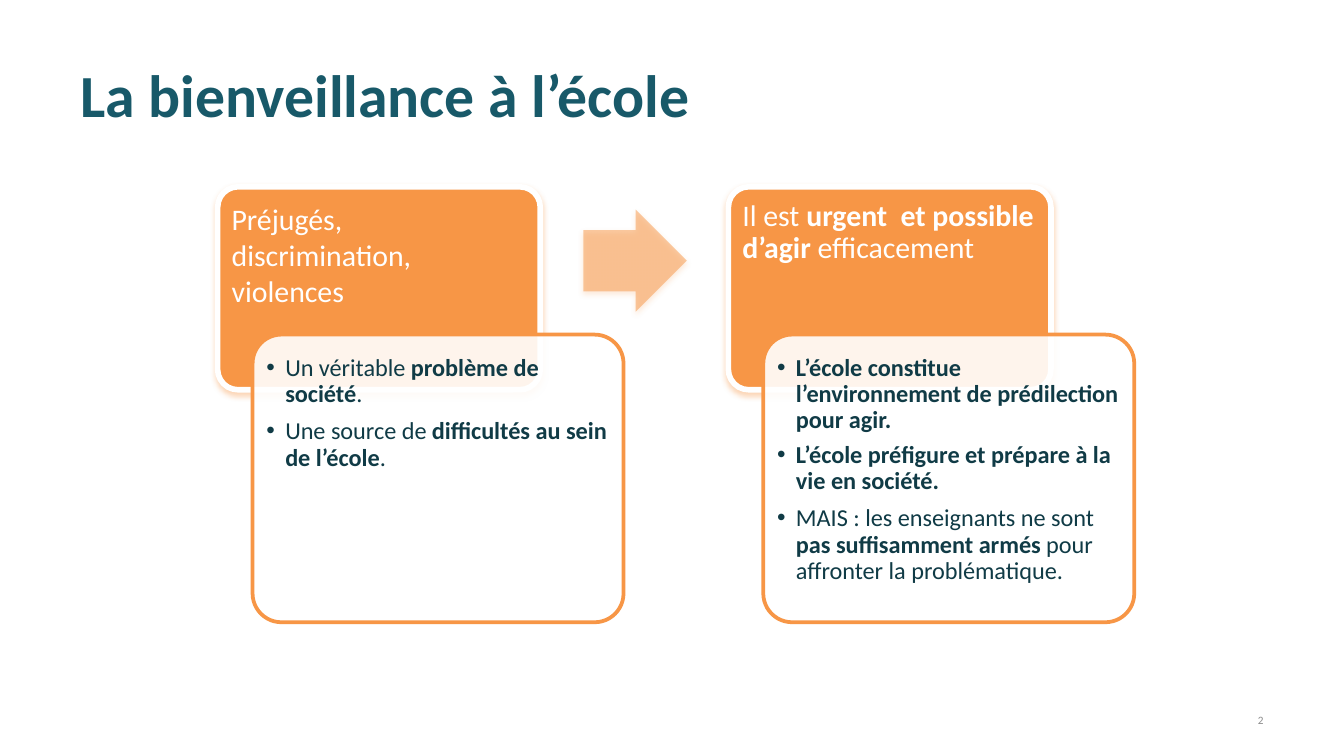
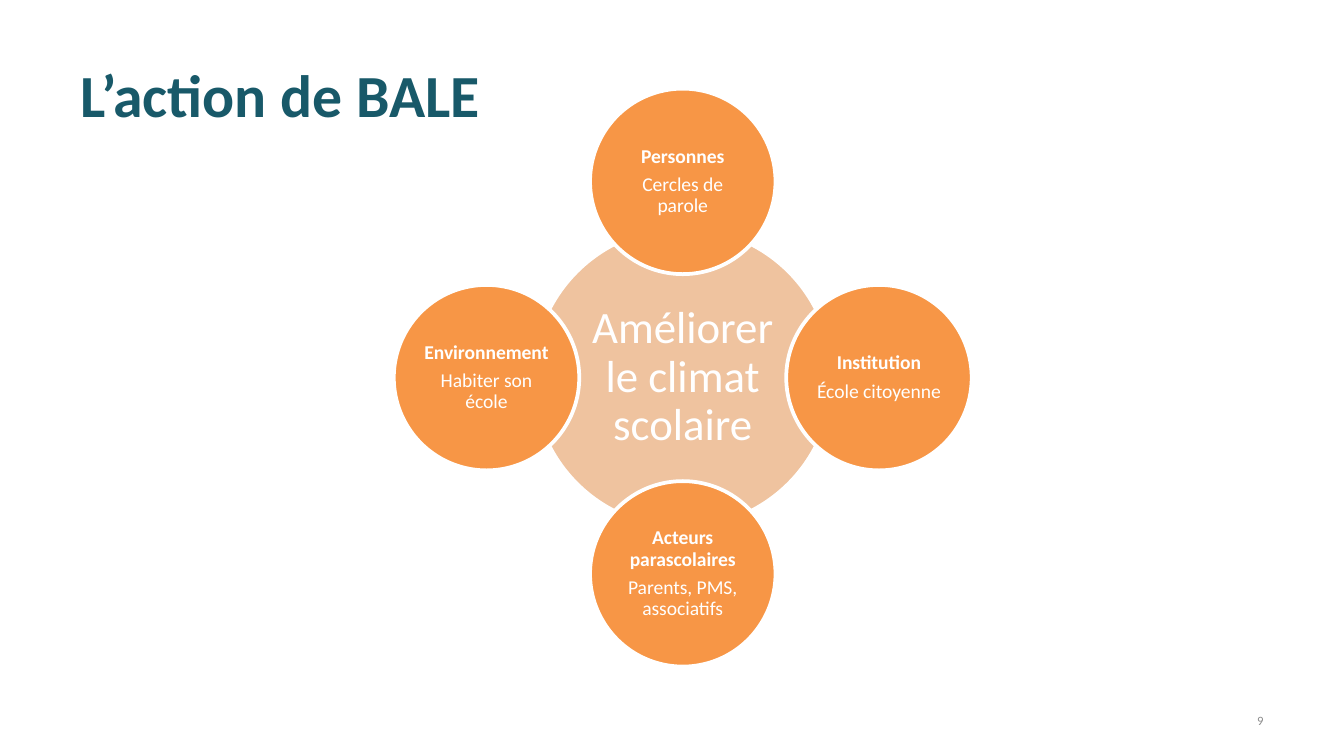
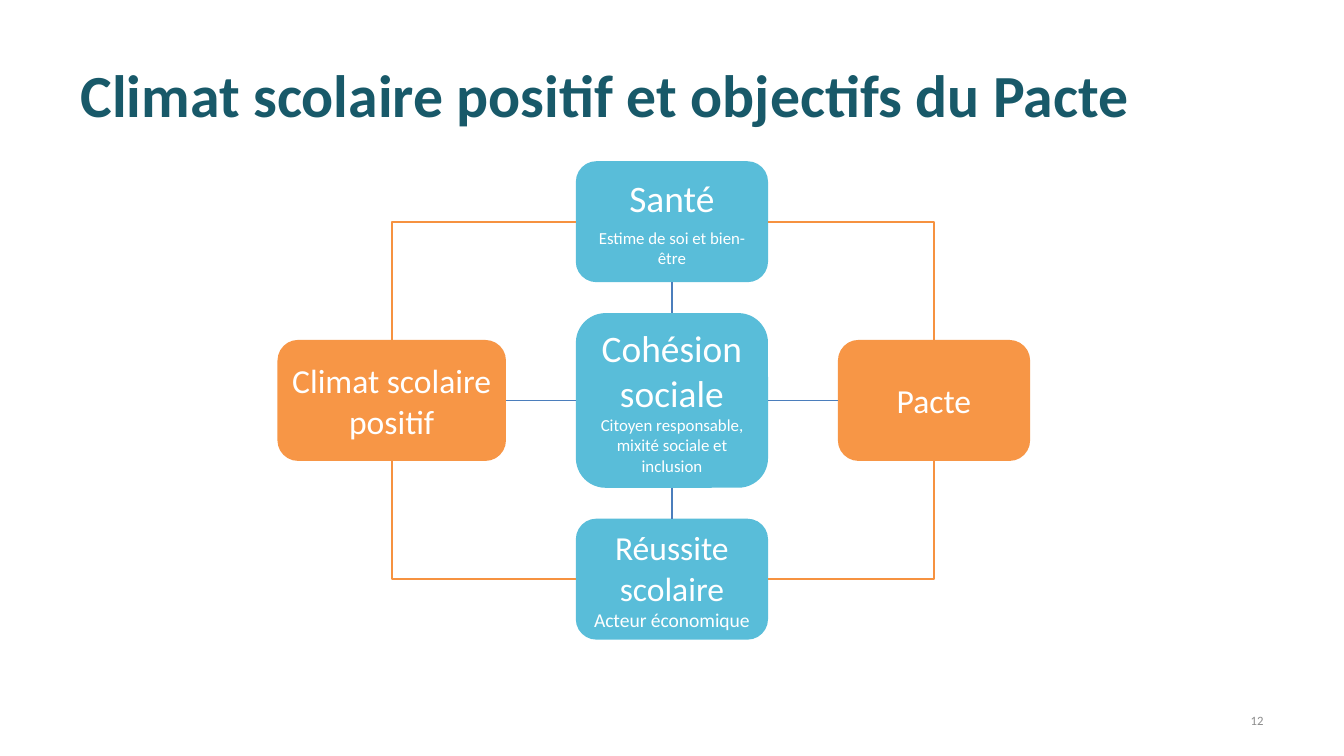
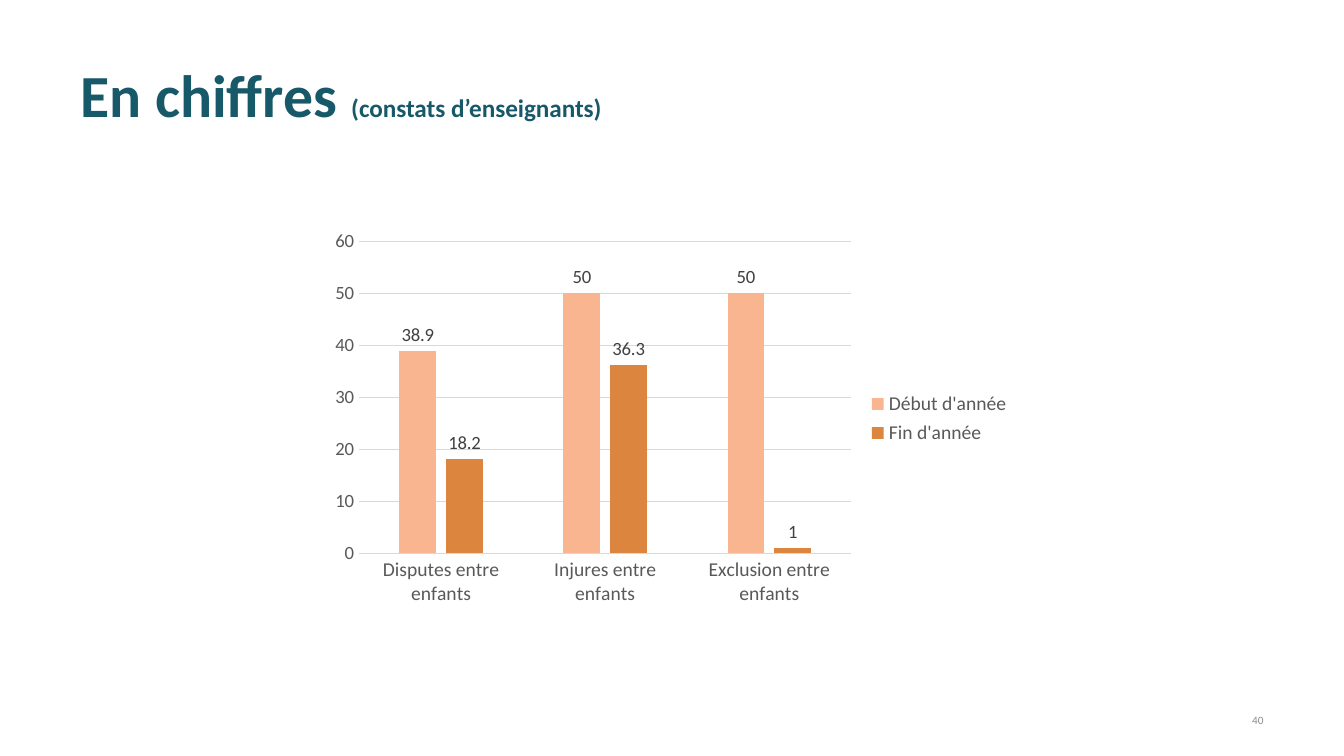
"""Build four slides about kindness at school."""
from dataclasses import dataclass

from lxml.etree import SubElement
from pptx import Presentation
from pptx.chart.data import CategoryChartData
from pptx.dml.color import RGBColor
from pptx.enum.chart import XL_CHART_TYPE as ChartType, XL_LABEL_POSITION as LabelPosition
from pptx.enum.chart import XL_LEGEND_POSITION as LegendPosition, XL_TICK_MARK as TickMark
from pptx.enum.shapes import MSO_CONNECTOR as Connector, MSO_SHAPE as Shape
from pptx.enum.text import MSO_ANCHOR as Anchor, MSO_AUTO_SIZE as AutoSize, PP_ALIGN as Align
from pptx.oxml.ns import qn
from pptx.util import Inches, Pt


@dataclass(frozen=True)
class Theme:
    """Colours, type sizes and font shared by the slides."""
    font: str = "Calibri"
    title: str = "185969"
    ink: str = "103B46"
    white: str = "FFFFFF"
    orange: str = "F79646"
    hub: str = "E08840"
    blue: str = "59BDD9"
    elbow: str = "F69240"
    link: str = "4B7EBC"
    page: str = "8C8C8C"
    axis: str = "595959"
    grid: str = "D9D9D9"
    label: str = "404040"
    title_size: float = 32
    subtitle_size: float = 13.5
    hub_size: float = 24
    large: float = 20
    medium: float = 18
    card: float = 16
    bullet: float = 13
    small: float = 10.5
    chart: float = 10
    tiny: float = 9


THEME = Theme()

TITLES = [
    {"text": "La bienveillance à l’école", "page": "2", "page_size": 6},
    {"text": "L’action de BALE", "page": "9", "page_size": 6.8},
    {"text": "Climat scolaire positif et objectifs du Pacte", "page": "12", "page_size": 6.8},
    {"text": "En chiffres ", "subtitle": "(constats d’enseignants)", "page": "40", "page_size": 6},
]

CARDS = [
    {"head": "Préjugés, discrimination, violences", "line": 1.0,
     "points": ["Un véritable *problème de société*.",
                ("Une source de *difficultés au sein de l’école*.", {"before": 1.5})]},
    {"head": "Il est *urgent  et possible d’agir* efficacement", "line": 0.9,
     "points": ["*L’école constitue l’environnement de prédilection pour agir.*",
                "*L’école préfigure et prépare à la vie en société.*",
                ("MAIS : les enseignants ne sont *pas suffisamment armés* pour affronter "
                 "la problématique.", {"before": 1.5})]},
]

HUB = "Améliorer le climat scolaire"
SATELLITES = [
    ((0, -1), "Personnes", "Cercles de parole"),
    ((1, 0), "Institution", "École citoyenne"),
    ((0, 1), "Acteurs parascolaires", "Parents, PMS, associatifs"),
    ((-1, 0), "Environnement", "Habiter son école"),
]

GOALS = [
    (0.9, ("Santé", {"size": THEME.large}),
     ("Estime de soi et bien-être", {"size": THEME.tiny, "before": 3.8})),
    (1.3, ("Cohésion sociale", {"size": THEME.large}),
     ("Citoyen responsable, mixité sociale et inclusion", {"size": THEME.tiny})),
    (0.9, ("Réussite scolaire", {"size": THEME.medium}),
     ("Acteur économique", {"size": THEME.small})),
]
SIDES = [(-1, 1.7, "Climat scolaire positif"), (1, 1.43, "Pacte")]

CATEGORIES = ["Disputes entre enfants", "Injures entre enfants", "Exclusion entre enfants"]
SERIES = [("Début d'année", [38.9, 50, 50], "F9B590"), ("Fin d'année", [18.2, 36.3, 1], "DB853E")]

TOP, LEFT, BOTTOM, RIGHT = range(4)


def rgb(color):
    """Turn a hex string into a colour."""
    return RGBColor.from_string(color)


def box(*lengths):
    """Turn lengths in inches into slide units."""
    return [Inches(length) for length in lengths]


def style_font(font, size, color, bold=False):
    """Set the font of a run or of a chart part."""
    font.name, font.size, font.bold = THEME.font, Pt(size), bold
    font.color.rgb = rgb(color)


def add_run(paragraph, text, size, color, bold=False):
    """Append a formatted run."""
    run = paragraph.add_run()
    run.text = text
    style_font(run.font, size, color, bold)


def add_bullet(paragraph, color):
    """Give a paragraph a hanging round bullet."""
    paragraph.level = 1
    properties = paragraph._p.get_or_add_pPr()
    properties.set("marL", str(Inches(0.14)))
    properties.set("indent", str(-Inches(0.14)))
    SubElement(SubElement(properties, qn("a:buClr")), qn("a:srgbClr"), val=color)
    SubElement(properties, qn("a:buFont"), typeface="Arial")
    SubElement(properties, qn("a:buChar"), char="•")


def write(frame, paragraphs, *, size=THEME.small, color=THEME.white, bold=False, align=Align.LEFT,
          anchor=Anchor.MIDDLE, insets=(0.1, 0.05), line=1.0, before=0, after=0, bullet=False):
    """Fill a text frame; asterisks enclose bold words and pairs override the format."""
    frame.word_wrap, frame.auto_size, frame.vertical_anchor = True, AutoSize.NONE, anchor
    frame.margin_left = frame.margin_right = Inches(insets[0])
    frame.margin_top = frame.margin_bottom = Inches(insets[1])
    for index, item in enumerate(paragraphs):
        text, changes = (item, {}) if isinstance(item, str) else item
        paragraph = frame.add_paragraph() if index else frame.paragraphs[0]
        paragraph.alignment, paragraph.line_spacing = align, line
        paragraph.space_before = Pt(changes.get("before", before))
        paragraph.space_after = Pt(after)
        if bullet:
            add_bullet(paragraph, color)
        for part, words in enumerate(text.split("*")):
            if words:
                add_run(paragraph, words, changes.get("size", size), color, bold or part % 2 == 1)


def add_shape(slide, kind, place, fill, *, line=None, width=1, opacity=100, adjust=(), glow=False):
    """Add a preset shape with its fill, outline and optional shadow."""
    shape = slide.shapes.add_shape(kind, *box(*place))
    for index, value in enumerate(adjust):
        shape.adjustments[index] = value
    shape.fill.solid()
    shape.fill.fore_color.rgb = rgb(fill)
    properties = shape.element.spPr
    if opacity < 100:
        color = properties.find(qn("a:solidFill")).find(qn("a:srgbClr"))
        SubElement(color, qn("a:alpha"), val=str(opacity * 1000))
    if line:
        shape.line.color.rgb, shape.line.width = rgb(line), Pt(width)
    else:
        shape.line.fill.background()
    shape.shadow.inherit = False
    if glow:
        shadow = SubElement(properties.find(qn("a:effectLst")), qn("a:outerShdw"),
                            blurRad=str(Pt(3)), dist=str(Pt(1.6)), dir="5400000", rotWithShape="0")
        color = SubElement(shadow, qn("a:srgbClr"), val=THEME.orange)
        SubElement(color, qn("a:alpha"), val="38000")
    return shape


def join(slide, start, start_side, end, end_side, color, bent=False):
    """Connect the sides of two shapes."""
    kind = Connector.ELBOW if bent else Connector.STRAIGHT
    connector = slide.shapes.add_connector(kind, 0, 0, 0, 0)
    connector.begin_connect(start, start_side)
    connector.end_connect(end, end_side)
    connector.line.color.rgb, connector.line.width = rgb(color), Pt(1)
    properties = connector.element.spPr
    if bent:
        properties.find(qn("a:prstGeom")).set("prst", "bentConnector2")
    SubElement(properties, qn("a:effectLst"))


def add_slide(presentation, text, page, page_size, subtitle=None):
    """Add a slide with its title and page number."""
    slide = presentation.slides.add_slide(presentation.slide_layouts[5])
    title = slide.shapes.title
    title.left, title.top, title.width, title.height = box(0.5, 0.23, 9, 0.94)
    write(title.text_frame, [text], size=THEME.title_size, color=THEME.title, bold=True)
    if subtitle:
        add_run(title.text_frame.paragraphs[0], subtitle, THEME.subtitle_size, THEME.title, True)
    number = slide.shapes.add_textbox(*box(7.17, 5.21, 2.33, 0.3))
    write(number.text_frame, [page], size=page_size, color=THEME.page, align=Align.RIGHT)
    return slide


def draw_cards(slide):
    """Draw two overlapping card pairs and the arrow between them."""
    left, top, step = 1.62, 1.39, 3.8
    for column, card in enumerate(CARDS):
        x = left + column * step
        head = add_shape(slide, Shape.ROUNDED_RECTANGLE, (x, top, 2.4, 1.51), THEME.orange,
                         line=THEME.white, width=3, adjust=[0.1], glow=True)
        write(head.text_frame, [card["head"]], size=THEME.card, anchor=Anchor.TOP,
              insets=(0.06, 0.06), line=card["line"], after=6)
        body = add_shape(slide, Shape.ROUNDED_RECTANGLE, (x + 0.26, top + 1.1, 2.76, 2.14),
                         THEME.white, line=THEME.orange, width=2, opacity=90, adjust=[0.1])
        write(body.text_frame, card["points"], size=THEME.bullet, color=THEME.ink,
              anchor=Anchor.TOP, insets=(0.04, 0.09), line=0.9, after=4.5, bullet=True)
    add_shape(slide, Shape.RIGHT_ARROW, (4.34, 1.56, 0.77, 0.76), THEME.orange,
              opacity=50, adjust=[0.6, 0.5], glow=True)


def draw_wheel(slide):
    """Draw the hub and the four circles around it."""
    def circle(across, down, diameter, fill, **options):
        x, y = 5.08 + across * 1.46 - diameter / 2, 2.81 + down * 1.46 - diameter / 2
        return add_shape(slide, Shape.OVAL, (x, y, diameter, diameter), fill,
                         line=THEME.white, width=2, **options)

    hub = circle(0, 0, 2.23, THEME.hub, opacity=50)
    write(hub.text_frame, [HUB], size=THEME.hub_size, align=Align.CENTER,
          insets=(0.03, 0.03), line=0.9)
    for (across, down), name, action in SATELLITES:
        satellite = circle(across, down, 1.38, THEME.orange)
        write(satellite.text_frame, [f"*{name}*", action], align=Align.CENTER,
              insets=(0.02, 0.02), line=0.9, after=3.7)


def draw_goals(slide):
    """Draw the column of goals linked to the box on each side."""
    center, middle, width, height, gap = 5, 2.98, 1.43, 0.9, 0.23

    def block(x, y, block_width, block_height, fill, paragraphs):
        shape = add_shape(slide, Shape.ROUNDED_RECTANGLE, (x, y, block_width, block_height),
                          fill, adjust=[0.17])
        write(shape.text_frame, paragraphs, size=THEME.medium, align=Align.CENTER,
              insets=(0.04, 0.04))
        return shape

    goals, y = [], 1.2
    for goal_height, *paragraphs in GOALS:
        goals.append(block(center - width / 2, y, width, goal_height, THEME.blue, paragraphs))
        y += goal_height + gap
    health, cohesion, success = goals
    for side, side_width, text in SIDES:
        edge = center + side * (width / 2 + 0.52)
        x = edge if side > 0 else edge - side_width
        end = block(x, middle - height / 2, side_width, height, THEME.orange, [text])
        outward, inward = (RIGHT, LEFT) if side > 0 else (LEFT, RIGHT)
        join(slide, health, outward, end, TOP, THEME.elbow, bent=True)
        join(slide, success, outward, end, BOTTOM, THEME.elbow, bent=True)
        join(slide, cohesion, outward, end, inward, THEME.link)
    for upper, lower in zip(goals, goals[1:]):
        join(slide, upper, BOTTOM, lower, TOP, THEME.link)


def draw_chart(slide):
    """Draw the column chart of the teachers' counts."""
    data = CategoryChartData()
    data.categories = CATEGORIES
    for name, values, _ in SERIES:
        data.add_series(name, values)
    chart = slide.shapes.add_chart(ChartType.COLUMN_CLUSTERED, *box(2.39, 1.66, 5.23, 2.91),
                                   data).chart
    style_font(chart.font, THEME.chart, "000000")
    chart.has_title = False
    chart.has_legend = True
    chart.legend.position, chart.legend.include_in_layout = LegendPosition.RIGHT, False
    style_font(chart.legend.font, THEME.small, THEME.axis)

    names, values = chart.category_axis, chart.value_axis
    for axis, size in ((names, THEME.small), (values, THEME.chart)):
        axis.major_tick_mark = axis.minor_tick_mark = TickMark.NONE
        style_font(axis.tick_labels.font, size, THEME.axis)
    values.minimum_scale, values.maximum_scale, values.major_unit = 0, 60, 10
    values.has_major_gridlines = True
    values.format.line.fill.background()
    for line in (names.format.line, values.major_gridlines.format.line):
        line.color.rgb, line.width = rgb(THEME.grid), Pt(0.75)

    plot = chart.plots[0]
    plot.gap_width, plot.overlap, plot.vary_by_categories = 219, -27, False
    for series, (_, _, color) in zip(plot.series, SERIES):
        series.format.fill.solid()
        series.format.fill.fore_color.rgb = rgb(color)
        labels = series.data_labels
        labels.show_value, labels.position = True, LabelPosition.OUTSIDE_END
        style_font(labels.font, THEME.chart, THEME.label)


def main():
    """Build and save the presentation."""
    presentation = Presentation()
    presentation.slide_width = Inches(10)
    presentation.slide_height = presentation.slide_width * 9 // 16
    for title, draw in zip(TITLES, (draw_cards, draw_wheel, draw_goals, draw_chart)):
        draw(add_slide(presentation, **title))
    presentation.save("out.pptx")


if __name__ == "__main__":
    main()
